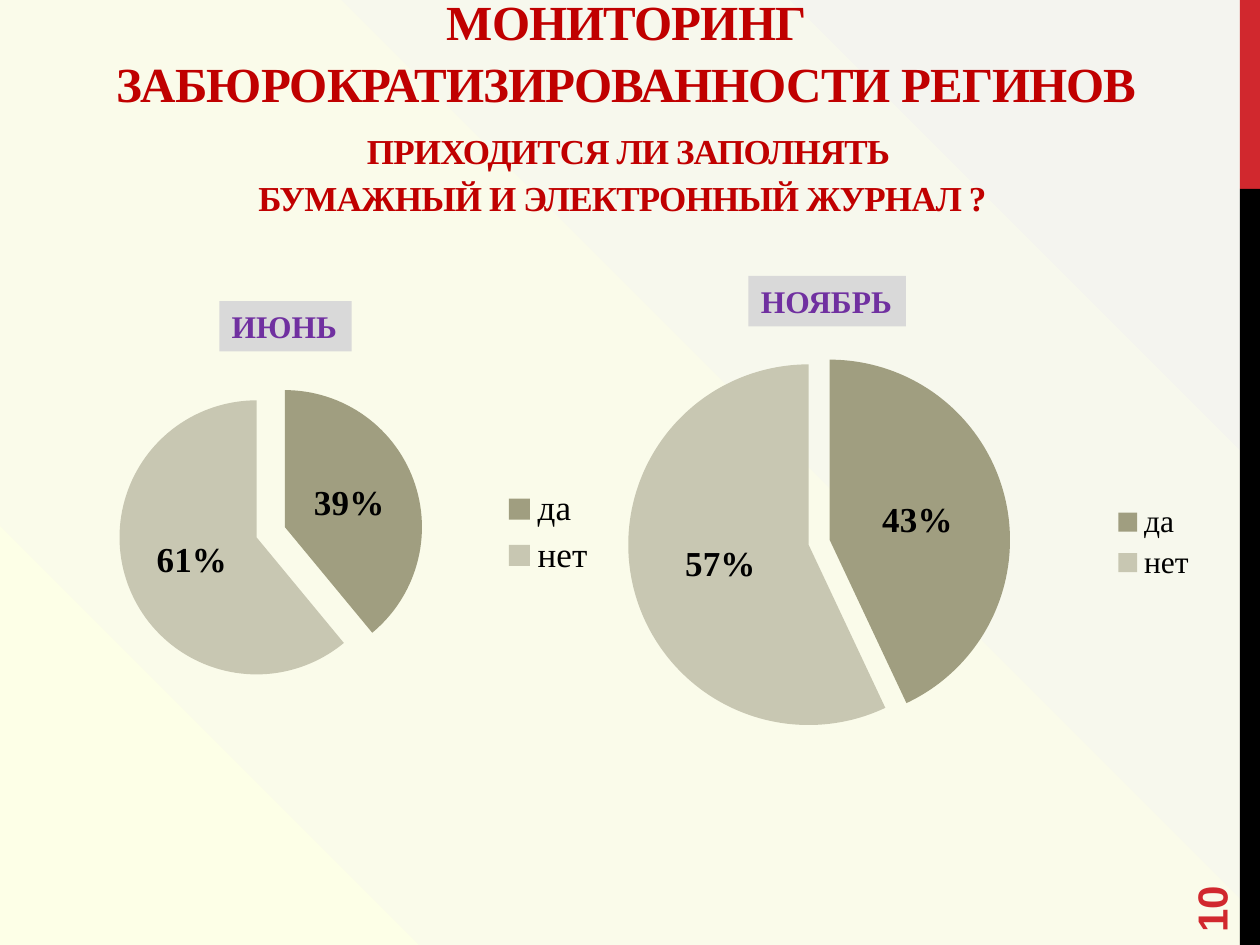
from lxml import etree
from pptx import Presentation
from pptx.chart.data import CategoryChartData
from pptx.dml.color import RGBColor
from pptx.enum.chart import XL_CHART_TYPE, XL_LABEL_POSITION, XL_LEGEND_POSITION
from pptx.enum.shapes import MSO_SHAPE
from pptx.enum.text import MSO_ANCHOR, MSO_AUTO_SIZE, PP_ALIGN
from pptx.oxml.ns import qn
from pptx.util import Inches, Pt

PIE = XL_CHART_TYPE.PIE
RECTANGLE = MSO_SHAPE.RECTANGLE
LABEL_CENTER = XL_LABEL_POSITION.CENTER
LEGEND_RIGHT = XL_LEGEND_POSITION.RIGHT
BOTTOM, MIDDLE = MSO_ANCHOR.BOTTOM, MSO_ANCHOR.MIDDLE
CENTER, LEFT = PP_ALIGN.CENTER, PP_ALIGN.LEFT
FIT_SHAPE = MSO_AUTO_SIZE.SHAPE_TO_FIT_TEXT

WIDTH, HEIGHT = 10, 7.5
SERIF, SANS = "Times New Roman", "Arial"
COLORS = {
    "title": "C00000", "accent": "D1282E", "black": "000000",
    "month": "7030A0", "month_fill": "D9D9D9", "yes": "A09E80", "no": "C8C7B2",
}
BACKGROUND = [(0, "FDFFE7"), (38, "FAFBEA"), (99, "F4F4EF")]
TITLE = [
    ("МОНИТОРИНГ ЗАБЮРОКРАТИЗИРОВАННОСТИ РЕГИНОВ\v ", 28),
    ("ПРИХОДИТСЯ ЛИ ЗАПОЛНЯТЬ \vБУМАЖНЫЙ И ЭЛЕКТРОННЫЙ ЖУРНАЛ ? ", 20),
]
PAGE_NUMBER = "10"
CATEGORIES = ["да", "нет"]
SURVEYS = [
    {"month": "ИЮНЬ", "values": (0.39, 0.61), "explosion": 11, "legend_size": 20,
     "chart": (0.35, 2.88, 4.49, 2.69), "caption": (1.74, 2.39, 1.05, 0.4)},
    {"month": "НОЯБРЬ", "values": (0.43, 0.57), "explosion": 6, "legend_size": 18,
     "chart": (4.21, 2.65, 5.39, 3.31), "caption": (5.94, 2.19, 1.25, 0.4)},
]


def rgb(name):
    return RGBColor.from_string(COLORS[name])


def inches(place):
    return [Inches(length) for length in place]


def style(font, size, color, name=SERIF, bold=True):
    font.size, font.name, font.bold = Pt(size), name, bold
    font.color.rgb = rgb(color)


def paint_background(page):
    page.background.fill.gradient()
    gradient = page.element.find(".//" + qn("a:gradFill"))
    for child in list(gradient):
        gradient.remove(child)
    stops = etree.SubElement(gradient, qn("a:gsLst"))
    for percent, color in BACKGROUND:
        stop = etree.SubElement(stops, qn("a:gs"), pos=str(percent * 1000))
        etree.SubElement(stop, qn("a:srgbClr"), val=color)
    shade = etree.SubElement(gradient, qn("a:path"), path="circle")
    etree.SubElement(shade, qn("a:fillToRect"), t="100000", r="100000")


def add_rectangle(page, place, color):
    box = page.shapes.add_shape(RECTANGLE, *inches(place))
    box.shadow.inherit = False
    box.fill.solid()
    box.fill.fore_color.rgb = rgb(color)
    box.line.fill.background()
    return box


def add_title(page):
    frame = page.shapes.add_textbox(*inches((0.47, 0.44, 9, 1.34))).text_frame
    frame.word_wrap = True
    frame.vertical_anchor = BOTTOM
    para = frame.paragraphs[0]
    para.alignment = CENTER
    para.line_spacing = 1.05
    for text, size in TITLE:
        for number, line in enumerate(text.split("\v")):
            if number:
                para.add_line_break()
            span = para.add_run()
            span.text = line
            style(span.font, size, "title")
            span.font._element.set("spc", "-50")


def add_page_number(page):
    box = page.shapes.add_textbox(*inches((8.89, 6.58, 1.44, 0.4)))
    box.rotation = 270
    frame = box.text_frame
    frame.word_wrap = True
    frame.vertical_anchor = MIDDLE
    frame.text = PAGE_NUMBER
    style(frame.paragraphs[0].runs[0].font, 24, "accent", SANS)


def add_pie(page, survey):
    data = CategoryChartData(number_format="0%")
    data.categories = CATEGORIES
    data.add_series("Series 1", survey["values"])
    chart = page.shapes.add_chart(PIE, *inches(survey["chart"]), data).chart
    chart.has_title = False
    chart.has_legend = True
    chart.legend.position = LEGEND_RIGHT
    chart.legend.include_in_layout = False
    style(chart.legend.font, survey["legend_size"], "black", bold=False)
    plot = chart.plots[0]
    plot.vary_by_categories = True
    series = plot.series[0]
    for number, color in enumerate(("yes", "no")):
        fill = series.points[number].format.fill
        fill.solid()
        fill.fore_color.rgb = rgb(color)
    explosion = etree.Element(qn("c:explosion"), val=str(survey["explosion"]))
    series._element.find(qn("c:tx")).addnext(explosion)
    plot.has_data_labels = True
    labels = plot.data_labels
    labels.show_value = True
    labels.show_percentage = False
    labels.number_format = "0%"
    labels.number_format_is_linked = False
    labels.position = LABEL_CENTER
    style(labels.font, 20, "black")


def add_caption(page, survey):
    frame = add_rectangle(page, survey["caption"], "month_fill").text_frame
    frame.word_wrap = False
    frame.auto_size = FIT_SHAPE
    frame.text = survey["month"]
    para = frame.paragraphs[0]
    para.alignment = LEFT
    style(para.runs[0].font, 18, "month")


def main():
    deck = Presentation()
    deck.slide_width, deck.slide_height = Inches(WIDTH), Inches(HEIGHT)
    page = deck.slides.add_slide(deck.slide_layouts[6])
    paint_background(page)
    stripe, split = 0.16, HEIGHT / 5
    add_rectangle(page, (WIDTH - stripe, 0, stripe, split), "accent")
    add_rectangle(page, (WIDTH - stripe, split, stripe, HEIGHT - split), "black")
    add_title(page)
    add_page_number(page)
    for add_part in (add_pie, add_caption):
        for survey in SURVEYS:
            add_part(page, survey)
    deck.save("out.pptx")


if __name__ == "__main__":
    main()
